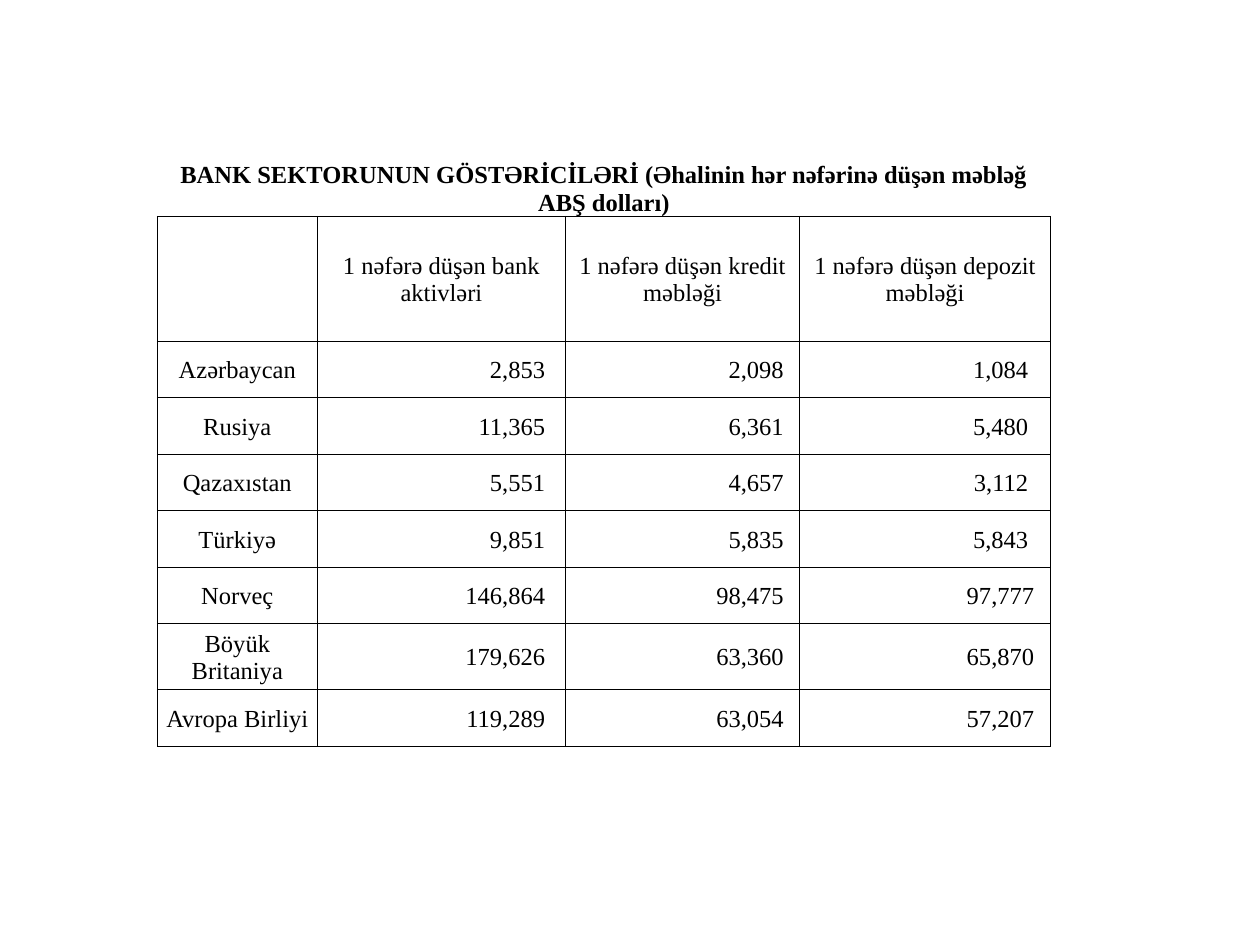
"""Build a slide with a table of bank figures per head."""
from dataclasses import dataclass

from lxml.etree import SubElement as Sub
from pptx import Presentation
from pptx.dml.color import RGBColor as Rgb
from pptx.enum.text import MSO_ANCHOR as Anchor, PP_ALIGN as Align
from pptx.oxml.ns import qn
from pptx.table import Table, _Cell as Cell
from pptx.util import Cm, Pt


@dataclass(frozen=True)
class Theme:
    """Hold the colour, font and sizes of the slide."""
    ink: str = "000000"
    font: str = "Times New Roman"
    size: float = 14
    line: float = 0.5
    pad: float = 0.03


@dataclass(frozen=True)
class Land:
    """Hold one country row and the indent of its last figure."""
    name: str
    sums: tuple[str, str, str]
    gap: float = 0.33
    high: float = 1.14


THEME = Theme()
TITLE = "BANK SEKTORUNUN GÖSTƏRİCİLƏRİ (Əhalinin hər nəfərinə düşən məbləğ ABŞ dolları)"
HEADS = (
    "",
    "1 nəfərə düşən bank aktivləri",
    "1 nəfərə düşən kredit məbləği",
    "1 nəfərə düşən depozit məbləği",
)
LANDS = (
    Land("Azərbaycan", ("2,853", "2,098", "1,084"), gap=0.45),
    Land("Rusiya", ("11,365", "6,361", "5,480"), gap=0.45),
    Land("Qazaxıstan", ("5,551", "4,657", "3,112"), gap=0.45),
    Land("Türkiyə", ("9,851", "5,835", "5,843"), gap=0.45),
    Land("Norveç", ("146,864", "98,475", "97,777")),
    Land("Böyük Britaniya", ("179,626", "63,360", "65,870"), high=1.33),
    Land("Avropa Birliyi", ("119,289", "63,054", "57,207")),
)
WIDE = (3.23, 5.0, 4.72, 5.06)
HIGH = (2.18, 2.52, *(land.high for land in LANDS))
LEFT, TOP = 3.17, 2.18


def edge(cell: Cell, sides: str) -> None:
    """Rule the given sides of a cell and clear the others."""
    props = cell._tc.get_or_add_tcPr()
    for side in "LRTB":
        line = Sub(props, qn(f"a:ln{side}"), w=str(Pt(THEME.line)))
        if side in sides:
            fill = Sub(line, qn("a:solidFill"))
            Sub(fill, qn("a:srgbClr"), val=THEME.ink)
        else:
            Sub(line, qn("a:noFill"))
    cell.fill.background()


def write(cell: Cell, text: str, bold: bool = False, gap: float | None = None,
          anchor: Anchor = Anchor.MIDDLE) -> None:
    """Fill a cell, centred unless a right gap is given."""
    right = THEME.pad if gap is None else gap
    form = {
        "margin_left": Cm(THEME.pad),
        "margin_right": Cm(right),
        "margin_top": Cm(THEME.pad),
        "margin_bottom": 0,
        "vertical_anchor": anchor,
    }
    for key, val in form.items():
        setattr(cell, key, val)
    cell.text = text
    para = cell.text_frame.paragraphs[0]
    para.alignment = Align.CENTER if gap is None else Align.RIGHT
    face = {"name": THEME.font, "size": Pt(THEME.size), "bold": bold}
    for key, val in face.items():
        setattr(para.font, key, val)
    for run in para.runs:
        for key, val in face.items():
            setattr(run.font, key, val)
        run.font.color.rgb = Rgb.from_string(THEME.ink)


def fill(table: Table) -> None:
    """Write the title, the heads and the country rows."""
    for col in range(len(WIDE)):
        edge(table.cell(0, col), "B")
    table.cell(0, 0).merge(table.cell(0, len(WIDE) - 1))
    write(table.cell(0, 0), TITLE, bold=True, anchor=Anchor.BOTTOM)
    rows = [(HEADS, (None,) * len(WIDE))]
    rows += [((land.name, *land.sums), (None, 0.41, 0.32, land.gap)) for land in LANDS]
    for row, (texts, gaps) in enumerate(rows, 1):
        for col, (text, gap) in enumerate(zip(texts, gaps)):
            cell = table.cell(row, col)
            edge(cell, "LRTB")
            write(cell, text, gap=gap)


def main() -> None:
    """Make the deck and save it."""
    deck = Presentation()
    deck.slide_width, deck.slide_height = Cm(25.4), Cm(19.05)
    slide = deck.slides.add_slide(deck.slide_layouts[6])
    table = slide.shapes.add_table(
        len(HIGH), len(WIDE), Cm(LEFT), Cm(TOP), Cm(sum(WIDE)), Cm(sum(HIGH))
    ).table
    for flag in ("first_row", "horz_banding"):
        setattr(table, flag, False)
    for col, wide in zip(table.columns, WIDE):
        col.width = Cm(wide)
    for row, high in zip(table.rows, HIGH):
        row.height = Cm(high)
    fill(table)
    deck.save("out.pptx")


if __name__ == "__main__":
    main()
